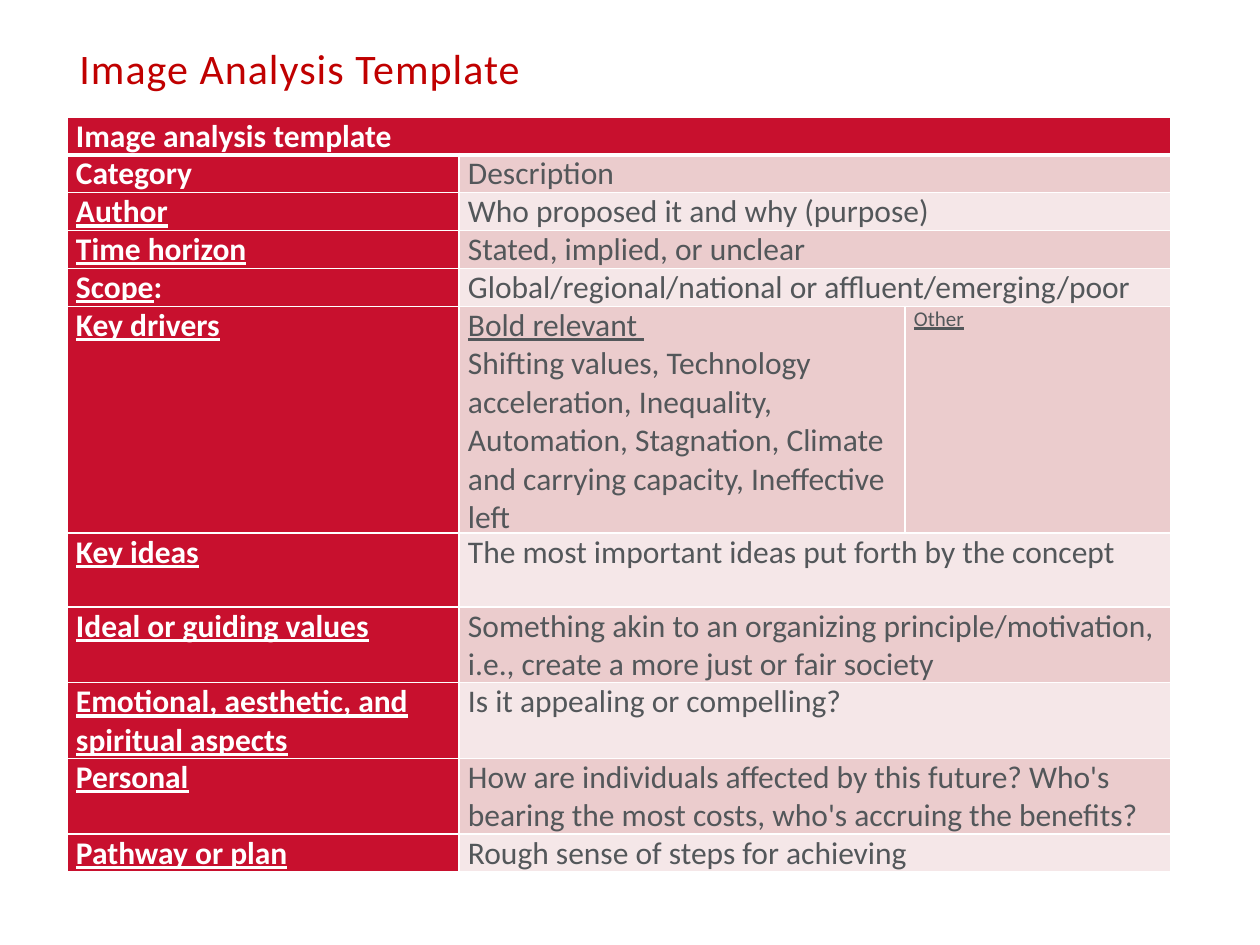
import pptx
import pptx.dml.color
import pptx.enum.text
import pptx.oxml
import pptx.oxml.ns
import pptx.util

EMU_PER_PX = 914400 // 126
COLORS = {
    "title": "C00000",
    "label": "C8102E",
    "dark_band": "EBCCCD",
    "light_band": "F5E7E8",
    "body": "53575A",
    "white": "FFFFFF",
}
LINE = 37  # height of a one-line row
COLUMNS = [392, 446, 266]

# Label, rest of the label without underline, descriptions, row height
ROWS = [
    ("Author", "", ["Who proposed it and why (purpose)"], LINE),
    ("Time horizon", "", ["Stated, implied, or unclear"], LINE),
    ("Scope", ":", ["Global/regional/national or affluent/emerging/poor"], LINE),
    ("Key drivers", "", [
        "Shifting values, Technology acceleration, Inequality, Automation, "
        "Stagnation, Climate and carrying capacity, Ineffective left", "Other"], 5 * LINE),
    ("Key ideas", "", ["The most important ideas put forth by the concept"], 2 * LINE),
    ("Ideal or guiding values", "", [
        "Something akin to an organizing principle/motivation, "
        "i.e., create a more just or fair society"], 2 * LINE),
    ("Emotional, aesthetic, and spiritual aspects", "", [
        "Is it appealing or compelling?"], 2 * LINE),
    ("Personal", "", [
        "How are individuals affected by this future? "
        "Who's bearing the most costs, who's accruing the benefits?"], 2 * LINE),
    ("Pathway or plan", "", ["Rough sense of steps for achieving"], LINE),
]


def px(length):
    return pptx.util.Emu(length * EMU_PER_PX)


def rgb(name):
    return pptx.dml.color.RGBColor.from_string(COLORS[name])


class SlideBuilder:
    font = "Calibri"

    def __init__(self, slide):
        self.slide = slide

    def add_text(self, paragraph, text, size, color, bold=False, underline=False):
        run = paragraph.add_run()
        run.text = text
        run.font.name = self.font
        run.font.size = pptx.util.Pt(size)
        run.font.bold = bold
        run.font.underline = underline
        run.font.color.rgb = rgb(color)
        return run

    def title(self, text, left, top, width, height):
        frame = self.slide.shapes.add_textbox(
            px(left), px(top), px(width), px(height)).text_frame
        frame.word_wrap = True
        frame.vertical_anchor = pptx.enum.text.MSO_ANCHOR.MIDDLE
        run = self.add_text(frame.paragraphs[0], text, 24, "title")
        run._r.get_or_add_rPr().set("spc", "60")

    def table(self, left, top, columns, heights):
        table = self.slide.shapes.add_table(
            len(heights), len(columns), px(left), px(top),
            px(sum(columns)), px(sum(heights))).table
        for column, width in zip(table.columns, columns):
            column.width = px(width)
        for index, (row, height) in enumerate(zip(table.rows, heights)):
            row.height = px(height)
            for cell in row.cells:
                self.borders(cell, top=3 if index == 1 else 1,
                             bottom=3 if index == 0 else 1)
                cell.margin_left = cell.margin_right = px(9)
                cell.margin_top = cell.margin_bottom = 0
        return table

    def borders(self, cell, top, bottom):
        properties = cell._tc.get_or_add_tcPr()
        for side, points in (("L", 1), ("R", 1), ("T", top), ("B", bottom)):
            properties.append(pptx.oxml.parse_xml(
                f'<a:ln{side} {pptx.oxml.ns.nsdecls("a")} w="{points * 12700}">'
                f'<a:solidFill><a:srgbClr val="{COLORS["white"]}"/></a:solidFill>'
                f'</a:ln{side}>'))

    def fill(self, cell, color):
        cell.fill.solid()
        cell.fill.fore_color.rgb = rgb(color)

    def label(self, cell, text, tail="", underline=True):
        self.fill(cell, "label")
        paragraph = cell.text_frame.paragraphs[0]
        self.add_text(paragraph, text, 18, "white", True, underline)
        if tail:
            self.add_text(paragraph, tail, 18, "white", True)

    def description(self, cell, text, band, heading="", size=18, underline=False):
        self.fill(cell, band)
        paragraph = cell.text_frame.paragraphs[0]
        if heading:
            self.add_text(paragraph, heading, size, "body", underline=True)
            paragraph = cell.text_frame.add_paragraph()
        self.add_text(paragraph, text, size, "body", underline=underline)


def main():
    deck = pptx.Presentation()
    deck.slide_width, deck.slide_height = px(1260), px(945)
    builder = SlideBuilder(deck.slides.add_slide(deck.slide_layouts[6]))

    # Title
    builder.title("Image Analysis Template", 67, 0, 1128, 136)

    # Table header and column headings
    heights = [LINE, LINE] + [height for *_, height in ROWS]
    table = builder.table(67, 117, COLUMNS, heights)
    table.cell(0, 0).merge(table.cell(0, 2))
    builder.label(table.cell(0, 0), "Image analysis template", underline=False)
    table.cell(1, 1).merge(table.cell(1, 2))
    builder.label(table.cell(1, 0), "Category", underline=False)
    builder.description(table.cell(1, 1), "Description", "dark_band")

    # Categories, in alternating bands
    for index, (label, tail, descriptions, _) in enumerate(ROWS, start=2):
        band = "dark_band" if index % 2 else "light_band"
        category, first, second = (table.cell(index, column) for column in range(3))
        builder.label(category, label, tail)
        if len(descriptions) == 1:
            first.merge(second)
            builder.description(first, descriptions[0], band)
        else:
            drivers, other = descriptions
            builder.description(first, drivers, band, heading="Bold relevant ")
            builder.description(second, other, band, size=12, underline=True)

    deck.save("out.pptx")


if __name__ == "__main__":
    main()
